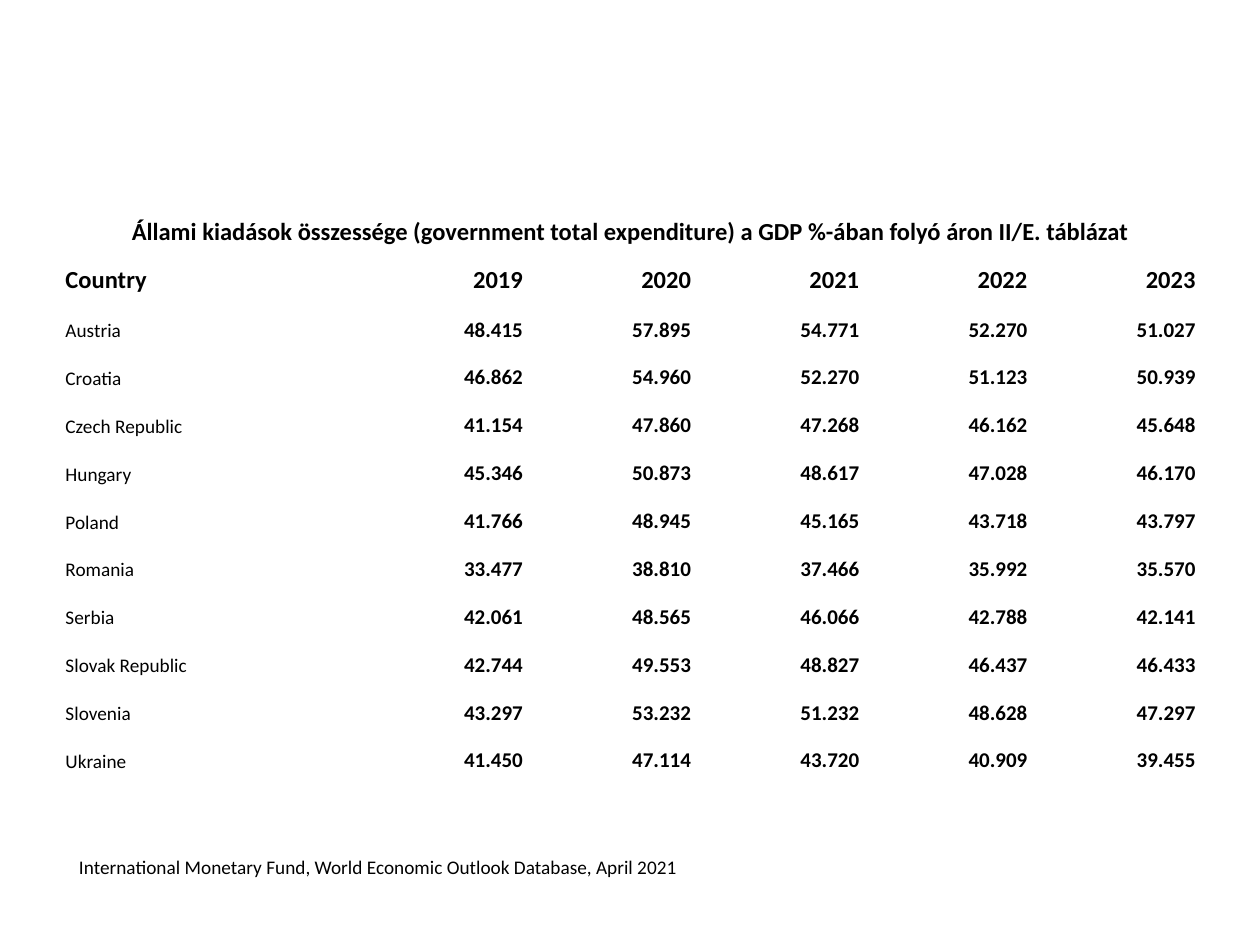
import pptx
import pptx.dml.color
import pptx.enum.text
import pptx.util

Cm = pptx.util.Cm
Pt = pptx.util.Pt
ALIGN = pptx.enum.text.PP_ALIGN
BLACK = pptx.dml.color.RGBColor(0, 0, 0)
WHITE = pptx.dml.color.RGBColor(255, 255, 255)

TITLE = "Állami kiadások összessége (government total expenditure) a GDP %-ában folyó áron II/E. táblázat"
SOURCE = "International Monetary Fund, World Economic Outlook Database, April 2021"
HEADINGS = ["Country", "2019", "2020", "2021", "2022", "2023"]
EXPENDITURE = [
    ("Austria", "48.415", "57.895", "54.771", "52.270", "51.027"),
    ("Croatia", "46.862", "54.960", "52.270", "51.123", "50.939"),
    ("Czech Republic", "41.154", "47.860", "47.268", "46.162", "45.648"),
    ("Hungary", "45.346", "50.873", "48.617", "47.028", "46.170"),
    ("Poland", "41.766", "48.945", "45.165", "43.718", "43.797"),
    ("Romania", "33.477", "38.810", "37.466", "35.992", "35.570"),
    ("Serbia", "42.061", "48.565", "46.066", "42.788", "42.141"),
    ("Slovak Republic", "42.744", "49.553", "48.827", "46.437", "46.433"),
    ("Slovenia", "43.297", "53.232", "51.232", "48.628", "47.297"),
    ("Ukraine", "41.450", "47.114", "43.720", "40.909", "39.455"),
]

HEADING_FONT = {"size": Pt(14), "bold": True}
COUNTRY_FONT = {"size": Pt(11), "bold": False}
VALUE_FONT = {"size": Pt(12), "bold": True}


class SlideBuilder:
    font_name = "Calibri"
    cell_format = {
        "margin_left": Cm(0.02),
        "margin_right": Cm(0.02),
        "margin_top": Cm(0.02),
        "margin_bottom": 0,
        "vertical_anchor": pptx.enum.text.MSO_ANCHOR.BOTTOM,
    }

    def __init__(self, slide):
        self.slide = slide

    def table(self, left, top, widths, heights):
        table = self.slide.shapes.add_table(
            len(heights), len(widths), left, top, sum(widths), sum(heights)
        ).table
        table.first_row = False
        table.horz_banding = False
        for column, width in zip(table.columns, widths):
            column.width = width
        for row, height in zip(table.rows, heights):
            row.height = height
        for cell in table.iter_cells():
            cell.fill.solid()
            cell.fill.fore_color.rgb = WHITE
            for name, value in self.cell_format.items():
                setattr(cell, name, value)
        return table

    def cell_text(self, cell, text, font_format, alignment):
        paragraph = cell.text_frame.paragraphs[0]
        paragraph.alignment = alignment
        run = paragraph.add_run()
        run.text = text
        run.font.name = self.font_name
        run.font.color.rgb = BLACK
        for name, value in font_format.items():
            setattr(run.font, name, value)

    def table_row(self, table, index, texts, label_font, value_font):
        for column, text in enumerate(texts):
            font_format = value_font if column else label_font
            alignment = ALIGN.RIGHT if column else ALIGN.LEFT
            self.cell_text(table.cell(index, column), text, font_format, alignment)

    def merged_text(self, table, index, span, text, font_format):
        first = table.cell(index, 0)
        first.merge(table.cell(index, span - 1))
        self.cell_text(first, text, font_format, ALIGN.CENTER)


def main():
    presentation = pptx.Presentation()
    presentation.slide_width = Cm(25.4)
    presentation.slide_height = Cm(19.05)
    builder = SlideBuilder(presentation.slides.add_slide(presentation.slide_layouts[6]))

    body_rows = len(EXPENDITURE) + 1
    widths = [Cm(5.87)] + [Cm(3.39)] * (len(HEADINGS) - 1)
    heights = [Cm(1.65)] + [Cm(10.62) // body_rows] * body_rows + [Cm(2.13)]
    expenditure = builder.table(Cm(1.3), Cm(3.33), widths, heights)

    builder.merged_text(expenditure, 0, len(HEADINGS), TITLE, HEADING_FONT)
    builder.table_row(expenditure, 1, HEADINGS, HEADING_FONT, HEADING_FONT)
    for index, country in enumerate(EXPENDITURE, start=2):
        builder.table_row(expenditure, index, country, COUNTRY_FONT, VALUE_FONT)
    builder.merged_text(expenditure, len(heights) - 1, 3, SOURCE, COUNTRY_FONT)

    presentation.save("out.pptx")


if __name__ == "__main__":
    main()
